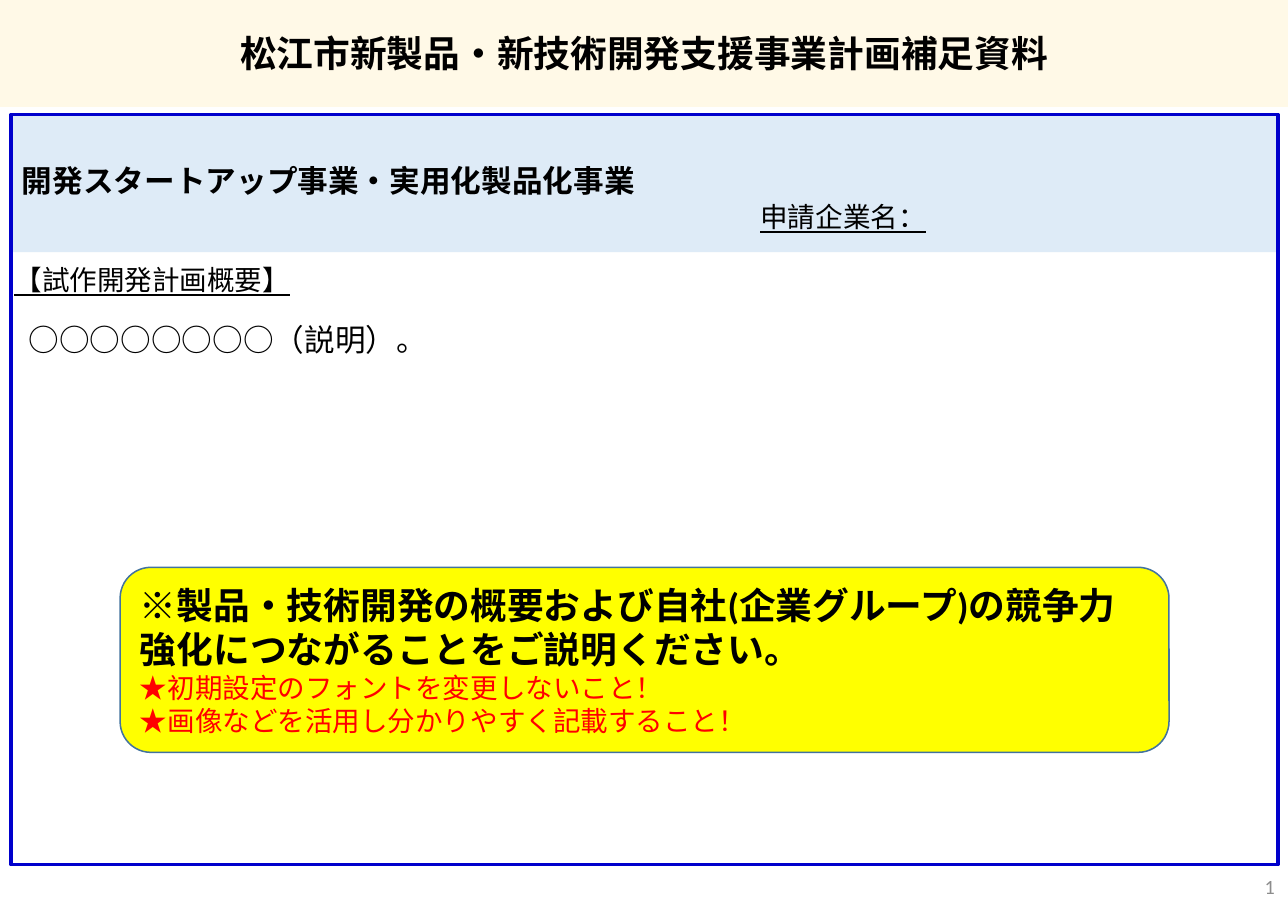
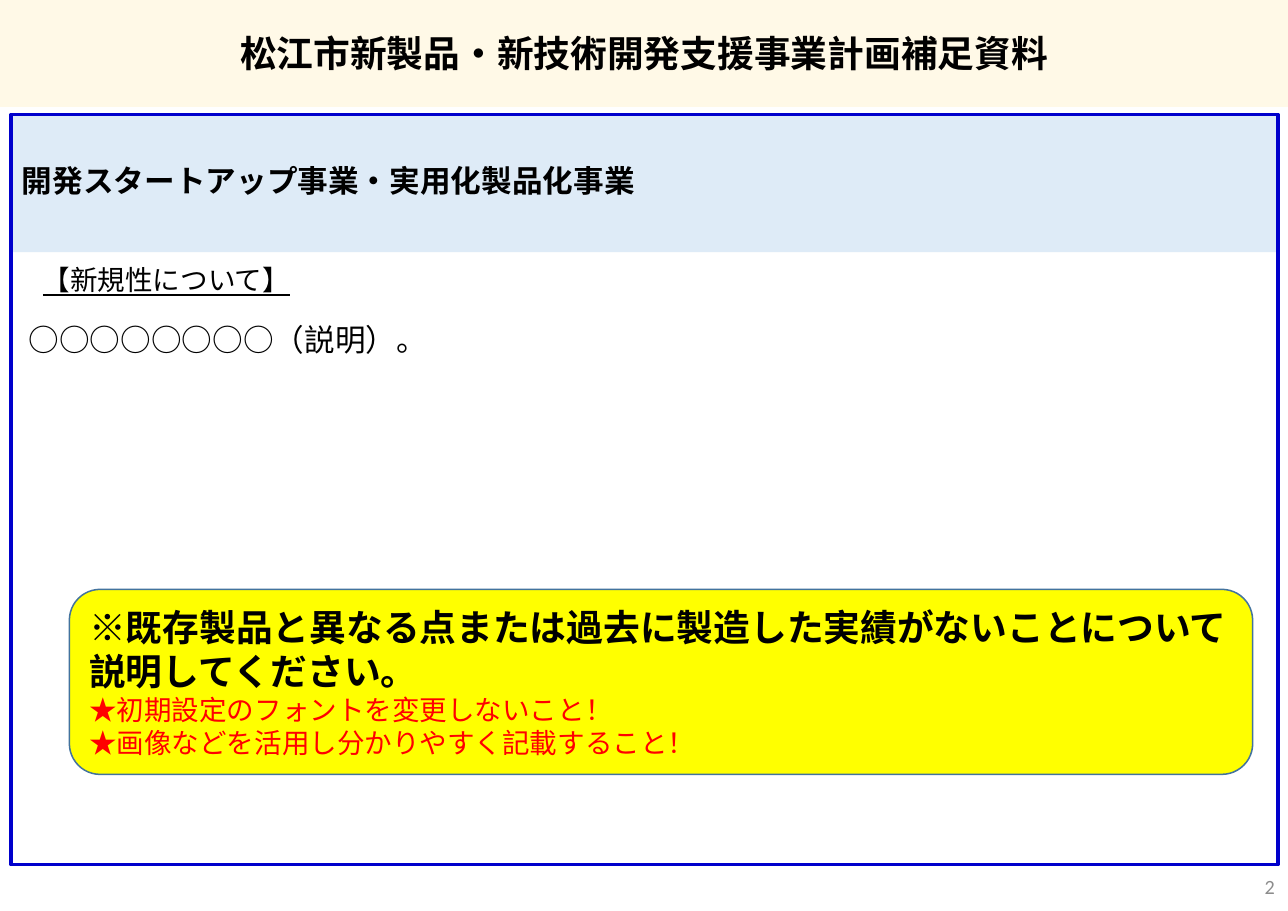
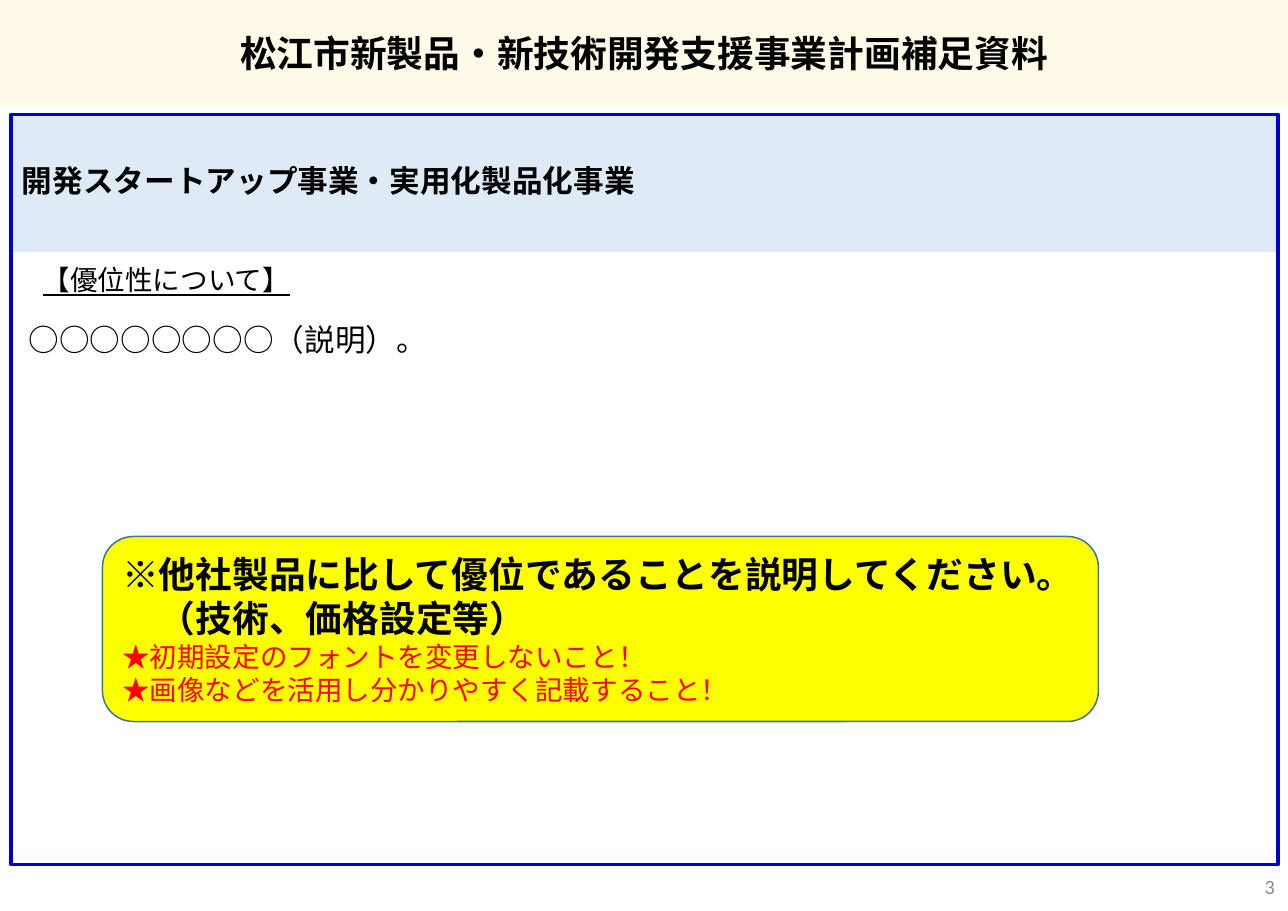
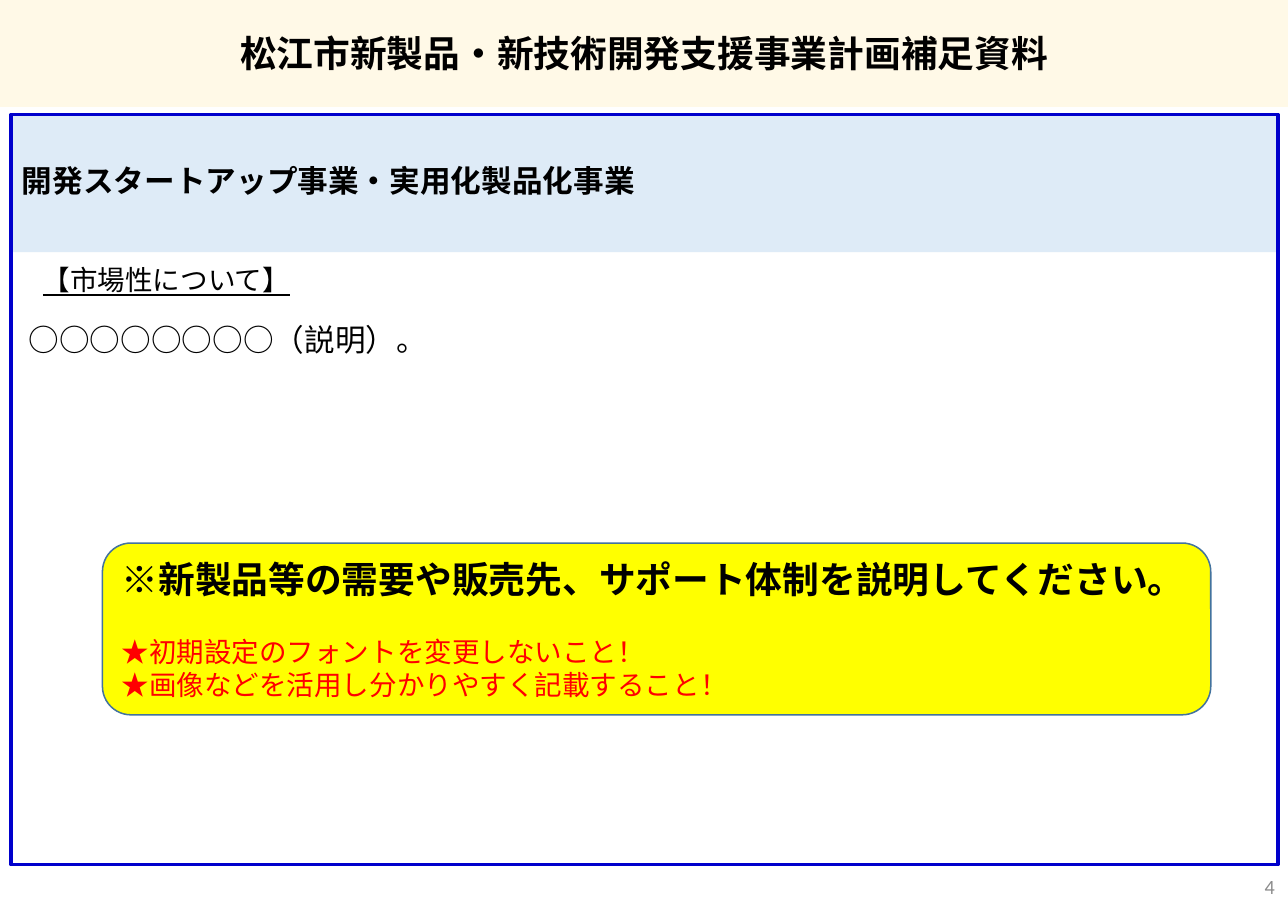
from pptx import Presentation
from pptx.dml.color import RGBColor
from pptx.enum.shapes import MSO_SHAPE
from pptx.enum.text import MSO_ANCHOR, MSO_AUTO_SIZE, PP_ALIGN
from pptx.oxml.ns import qn
from pptx.util import Inches, Pt
from lxml.etree import SubElement

# Shared look
BLACK = RGBColor(0x00, 0x00, 0x00)
RED = RGBColor(0xFF, 0x00, 0x00)
GRAY = RGBColor(0x8C, 0x8C, 0x8C)
CREAM = RGBColor(0xFF, 0xF9, 0xE7)
PALE_BLUE = RGBColor(0xDE, 0xEB, 0xF7)
FRAME_BLUE = RGBColor(0x00, 0x00, 0xCC)
YELLOW = RGBColor(0xFF, 0xFF, 0x00)
CALLOUT_EDGE = RGBColor(0x43, 0x73, 0x9E)
GOTHIC, SANS, BODY = "Noto Sans CJK JP", "Arial", "Calibri"

WIDTH, HEIGHT = 11.69, 8.27
MARGIN, FRAME_WIDTH = 0.1, 11.5
INSETS = (0.1, 0.05, 0.1, 0.05)
BLANK_LAYOUT = 6

# Content
TITLE = "松江市新製品・新技術開発支援事業計画補足資料"
PROGRAM = "開発スタートアップ事業・実用化製品化事業"
EXPLANATION = "○○○○○○○○（説明）。"
COMPANY = "申請企業名："
REMINDERS = ["★初期設定のフォントを変更しないこと！",
             "★画像などを活用し分かりやすく記載すること！"]
SLIDES = [
    dict(topic="【試作開発計画概要】", company=True, wrap=True, at=(1.09, 5.15, 9.52, 1.68),
         advice=["※製品・技術開発の概要および自社(企業グループ)の競争力強化につながることをご説明ください。"]),
    dict(topic="【新規性について】", at=(0.63, 5.35, 10.74, 1.68),
         advice=["※既存製品と異なる点または過去に製造した実績がないことについて",
                 "説明してください。"]),
    dict(topic="【優位性について】", at=(0.93, 4.87, 9.04, 1.68),
         advice=["※他社製品に比して優位であることを説明してください。",
                 "　（技術、価格設定等）"]),
    dict(topic="【市場性について】", at=(0.93, 4.93, 10.06, 1.56), gap=22,
         advice=["※新製品等の需要や販売先、サポート体制を説明してください。"]),
]


def add_panel(page, at, fill=None, line=None, weight=1, kind=MSO_SHAPE.RECTANGLE):
    panel = page.shapes.add_shape(kind, *map(Inches, at))
    panel.shadow.inherit = False
    if fill is None:
        panel.fill.background()
    else:
        panel.fill.solid()
        panel.fill.fore_color.rgb = fill
    if line is None:
        panel.line.fill.background()
    else:
        panel.line.color.rgb = line
        panel.line.width = Pt(weight)
    return panel


def add_textbox(page, at):
    return page.shapes.add_textbox(*map(Inches, at))


def set_frame(box, insets=INSETS, wrap=True, grow=False, anchor=MSO_ANCHOR.MIDDLE):
    frame = box.text_frame
    frame.margin_left, frame.margin_top, frame.margin_right, frame.margin_bottom = map(Inches, insets)
    frame.word_wrap = wrap
    frame.auto_size = MSO_AUTO_SIZE.SHAPE_TO_FIT_TEXT if grow else MSO_AUTO_SIZE.NONE
    frame.vertical_anchor = anchor
    return frame


def write(para, text, size, font, color=BLACK, bold=False, underline=False,
          align=PP_ALIGN.LEFT, spacing=None, before=0):
    para.text = text
    para.alignment = align
    para.space_before = Pt(before)
    if spacing:
        para.line_spacing = spacing
    for span in para.runs:
        span.font.size = Pt(size)
        span.font.name = font
        span.font.bold = bold
        span.font.underline = underline
        span.font.color.rgb = color
        # East Asian characters use the same typeface
        SubElement(span.font._element, qn("a:ea"), typeface=font)


def add_label(page, text, right, top):
    """Underlined label, sized by its characters and ending at `right`."""
    width = 0.25 * len(text) + 0.22
    box = add_textbox(page, (right - width, top, width, 0.4))
    frame = set_frame(box, wrap=False, grow=True)
    write(frame.paragraphs[0], text, 18, GOTHIC, underline=True, align=PP_ALIGN.RIGHT)


def add_common_parts(page, number, topic):
    # Program band
    band = add_panel(page, (MARGIN, 1.03, FRAME_WIDTH, 1.26), PALE_BLUE)
    frame = set_frame(band, (0.1, 0, 0.1, 0))
    write(frame.paragraphs[0], PROGRAM, 20, SANS, bold=True, spacing=0.9)

    # Explanation, outer frame and topic
    box = add_textbox(page, (MARGIN, 2.86, 11.36, 0.82))
    frame = set_frame(box, (0.16, 0.05, 0, 0.05), anchor=MSO_ANCHOR.TOP)
    write(frame.paragraphs[0], EXPLANATION, 20, GOTHIC, before=11)
    add_panel(page, (MARGIN, 1.04, FRAME_WIDTH, 6.81), line=FRAME_BLUE, weight=2.25)
    add_label(page, topic, 2.73, 2.34)

    # Title band
    band = add_panel(page, (0, 0, WIDTH, 0.97), CREAM)
    frame = set_frame(band, (0.1, 0.08, 0.1, 0.05))
    write(frame.paragraphs[0], TITLE, 24, GOTHIC, bold=True,
          align=PP_ALIGN.CENTER, spacing=0.9, before=11)

    # Page number
    box = add_textbox(page, (11.37, 7.88, 0.3, 0.34))
    frame = set_frame(box, wrap=False, grow=True)
    write(frame.paragraphs[0], str(number), 13.2, BODY, GRAY, align=PP_ALIGN.RIGHT)


def add_callout(page, at, advice, wrap=False, gap=0):
    callout = add_panel(page, at, YELLOW, CALLOUT_EDGE, kind=MSO_SHAPE.ROUNDED_RECTANGLE)
    frame = set_frame(callout, wrap=wrap, grow=True)
    frame.text = "\n".join(advice + REMINDERS)
    for index, para in enumerate(frame.paragraphs):
        if index < len(advice):
            write(para, para.text, 24, BODY, bold=True)
        else:
            write(para, para.text, 18, BODY, RED, before=gap if index == len(advice) else 0)


def main():
    deck = Presentation()
    deck.slide_width, deck.slide_height = Inches(WIDTH), Inches(HEIGHT)
    for number, content in enumerate(SLIDES, 1):
        page = deck.slides.add_slide(deck.slide_layouts[BLANK_LAYOUT])
        add_common_parts(page, number, content["topic"])
        add_callout(page, content["at"], content["advice"],
                    content.get("wrap", False), content.get("gap", 0))
        if content.get("company"):
            add_label(page, COMPANY, 8.5, 1.77)
    deck.save("out.pptx")


if __name__ == "__main__":
    main()
